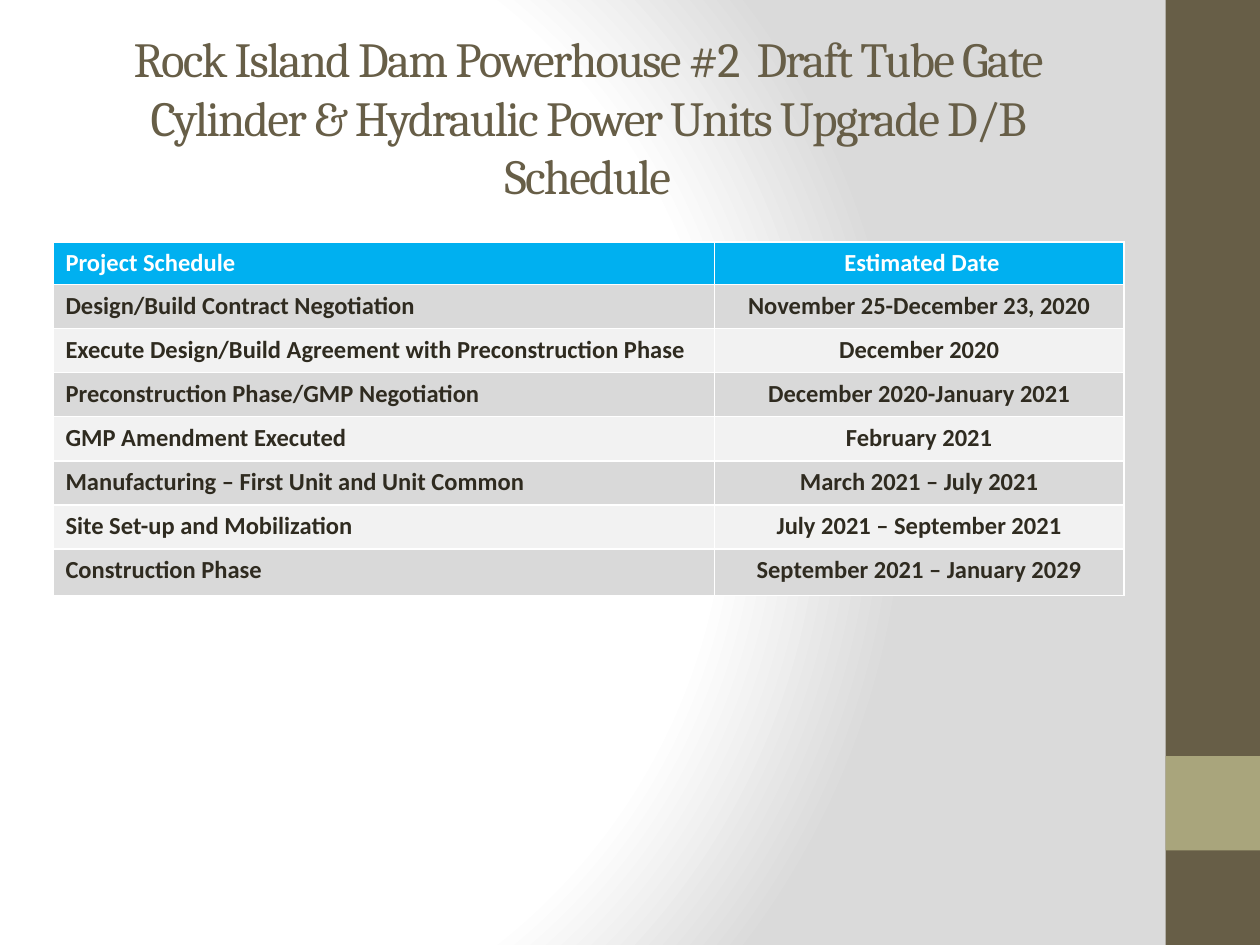
from lxml.etree import SubElement
from pptx import Presentation
from pptx.dml.color import RGBColor
from pptx.enum.shapes import MSO_SHAPE
from pptx.enum.text import MSO_ANCHOR, MSO_AUTO_SIZE, PP_ALIGN
from pptx.oxml import parse_xml
from pptx.oxml.ns import nsdecls, qn
from pptx.util import Inches, Pt

OLIVE = RGBColor(0x67, 0x5E, 0x47)
SAGE = RGBColor(0xA9, 0xA5, 0x7C)
INK = RGBColor(0x2F, 0x2B, 0x20)
WHITE = RGBColor(0xFF, 0xFF, 0xFF)
SKY = RGBColor(0x00, 0xB0, 0xF0)
BANDS = (RGBColor(0xF2, 0xF2, 0xF2), RGBColor(0xD9, 0xD9, 0xD9))
BACKDROP_EDGE = RGBColor(0xDA, 0xDA, 0xDA)

WIDTH, HEIGHT = Inches(10), Inches(7.5)
TITLE = ("Rock Island Dam Powerhouse #2  Draft Tube Gate Cylinder & "
         "Hydraulic Power Units Upgrade D/B Schedule")
SCHEDULE = [
    ("Project Schedule", " Estimated Date"),
    ("Design/Build Contract Negotiation", "November 25-December 23, 2020"),
    ("Execute Design/Build Agreement with Preconstruction Phase", "December 2020"),
    ("Preconstruction Phase/GMP Negotiation", "December 2020-January 2021"),
    ("GMP Amendment Executed", "February 2021"),
    ("Manufacturing – First Unit and Unit Common", "March 2021 – July 2021"),
    ("Site Set-up and Mobilization", "July 2021 – September 2021"),
    ("Construction Phase", "September 2021 – January 2029"),
]
COLUMN_WIDTHS = (5.25, 3.25)
ROW_HEIGHTS = [0.17] + [0.35] * 6 + [0.37]


def paint_backdrop(slide):
    """Fill the background with a circular gradient centred on the left."""
    slide.background.fill.solid()
    properties = slide.background.fill._xPr
    stops = "".join(
        f'<a:gs pos="{share * 1000}"><a:srgbClr val="{color}"/></a:gs>'
        for share, color in ((0, WHITE), (75, WHITE), (100, BACKDROP_EDGE)))
    gradient = parse_xml(
        f'<a:gradFill {nsdecls("a")} rotWithShape="1"><a:gsLst>{stops}</a:gsLst>'
        '<a:path path="circle"><a:fillToRect l="20000" t="50000" r="100000" '
        'b="50000"/></a:path></a:gradFill>')
    properties.replace(properties.find(qn("a:solidFill")), gradient)


def add_side_block(slide, top, height, color):
    """Add a block to the right-hand bar, placed by shares of slide height."""
    left = int(WIDTH * 0.925)
    block = slide.shapes.add_shape(
        MSO_SHAPE.RECTANGLE, left, int(HEIGHT * top), WIDTH - left, int(HEIGHT * height))
    block.shadow.inherit = False
    block.fill.solid()
    block.fill.fore_color.rgb = color
    block.line.fill.background()


def style_run(run, font_name, size, color, bold=False):
    """Apply the typeface, size, colour and weight to a run."""
    run.font.name = font_name
    run.font.size = Pt(size)
    run.font.color.rgb = color
    run.font.bold = bold


def set_title(slide):
    """Place and format the slide title."""
    title = slide.shapes.title
    title.left, title.top = Inches(0.5), Inches(0.3)
    title.width, title.height = Inches(8.33), Inches(1.25)
    frame = title.text_frame
    frame.text = TITLE
    frame.word_wrap = True
    frame.auto_size = MSO_AUTO_SIZE.NONE
    frame.vertical_anchor = MSO_ANCHOR.MIDDLE
    heading = frame.paragraphs[0]
    heading.alignment = PP_ALIGN.CENTER
    style_run(heading.runs[0], "Cambria", 28, OLIVE)
    heading.runs[0].font._element.set("spc", "-100")


def add_borders(cell, sides):
    """Draw thin white rules on the given sides of a cell."""
    properties = cell._tc.get_or_add_tcPr()
    for side in sides:
        rule = SubElement(properties, qn(f"a:ln{side}"), w=str(Pt(1)))
        fill = SubElement(rule, qn("a:solidFill"))
        SubElement(fill, qn("a:srgbClr"), val=str(WHITE))


def fill_cell(cell, text, fill, color, alignment):
    """Write one schedule entry and format its cell."""
    add_borders(cell, "LRTB")
    cell.fill.solid()
    cell.fill.fore_color.rgb = fill
    cell.text_frame.text = text
    entry = cell.text_frame.paragraphs[0]
    entry.alignment = alignment
    style_run(entry.runs[0], "Calibri", 14, color, bold=True)


def add_schedule(slide):
    """Add the banded schedule table."""
    schedule = slide.shapes.add_table(
        len(SCHEDULE), len(COLUMN_WIDTHS), Inches(0.42), Inches(1.92),
        Inches(sum(COLUMN_WIDTHS)), Inches(sum(ROW_HEIGHTS))).table
    for column, width in zip(schedule.columns, COLUMN_WIDTHS):
        column.width = Inches(width)
    for index, (row, entries) in enumerate(zip(schedule.rows, SCHEDULE)):
        row.height = Inches(ROW_HEIGHTS[index])
        fill, color = (BANDS[index % 2], INK) if index else (SKY, WHITE)
        for cell, text, alignment in zip(
                row.cells, entries, (PP_ALIGN.LEFT, PP_ALIGN.CENTER)):
            fill_cell(cell, text, fill, color, alignment)


def main():
    """Build and save the schedule slide."""
    deck = Presentation()
    deck.slide_width, deck.slide_height = WIDTH, HEIGHT
    slide = deck.slides.add_slide(deck.slide_layouts[5])
    paint_backdrop(slide)
    add_side_block(slide, 0, 1, OLIVE)
    add_side_block(slide, 0.8, 0.1, SAGE)
    set_title(slide)
    add_schedule(slide)
    deck.save("out.pptx")


if __name__ == "__main__":
    main()
